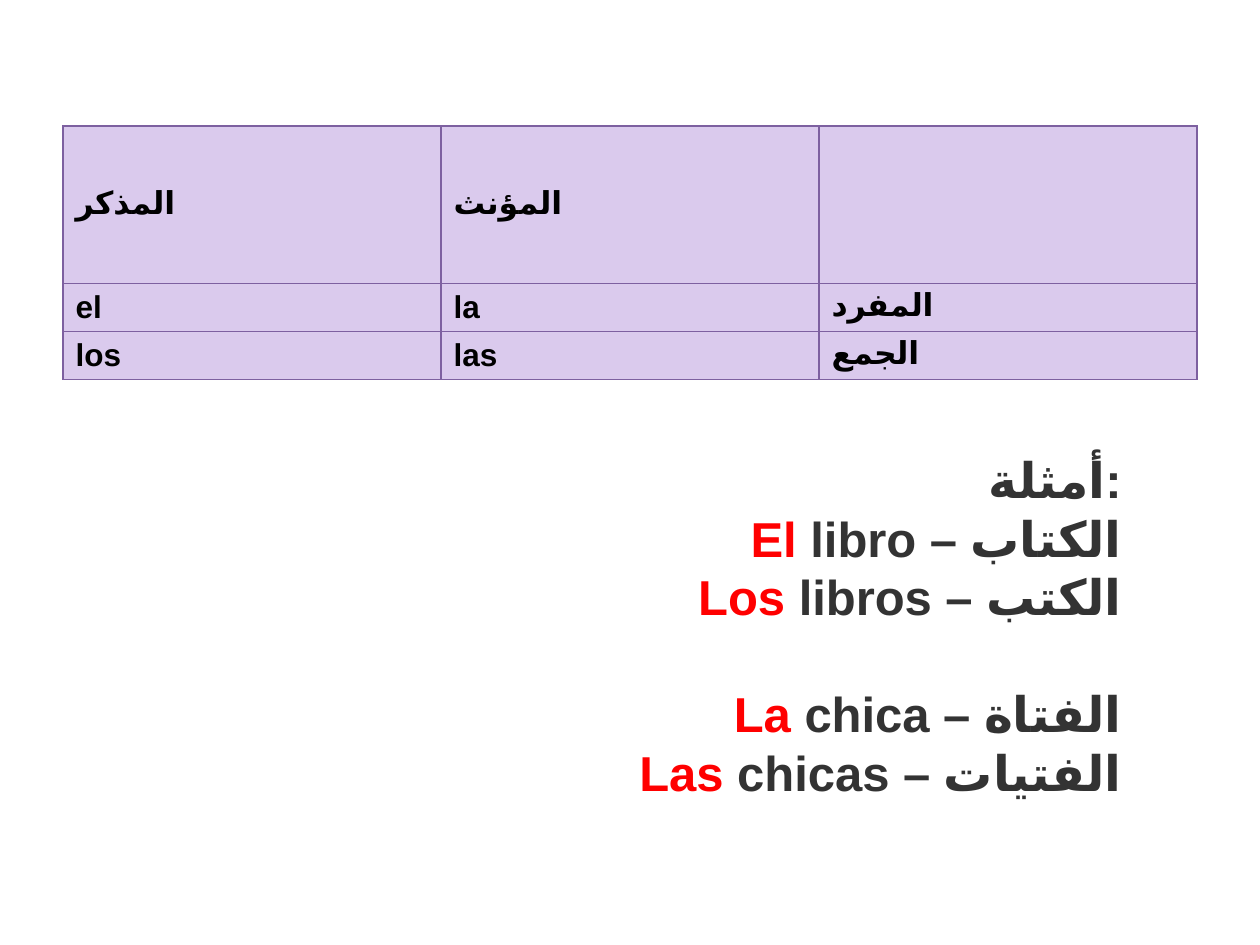
import dataclasses

import lxml.etree
import pptx
import pptx.dml.color
import pptx.enum.lang
import pptx.enum.text
import pptx.oxml.ns
import pptx.util

Pt = pptx.util.Pt


@dataclasses.dataclass(frozen=True)
class Theme:
    """Hold the colours, font and sizes of the slide."""
    font: str = "Arial"
    fill: str = "DACAED"
    border: str = "7D60A0"
    cell_text: str = "000000"
    text: str = "333333"
    article: str = "FF0000"
    cell_size: float = 18
    example_size: float = 28
    border_width: float = 0.75


THEME = Theme()

ARTICLES = [
    ["المذكر", "المؤنث", ""],
    ["el", "la", "المفرد"],
    ["los", "las", "الجمع"],
]

EXAMPLES = [
    ("", "أمثلة:", 0),
    ("El", "libro – الكتاب", 0),
    ("Los", "libros – الكتب", 0),
    ("La", "chica – الفتاة", 33),
    ("Las", "chicas – الفتيات", 0),
]


def add_child(parent, tag, **attributes):
    """Append a DrawingML element to the parent."""
    return lxml.etree.SubElement(parent, pptx.oxml.ns.qn(tag), attributes)


def add_text(para, text, *, size, color, bold=True):
    """Add a formatted span of text to a paragraph."""
    span = para.add_run()
    span.text = text
    span.font.size = Pt(size)
    span.font.bold = bold
    span.font.color.rgb = pptx.dml.color.RGBColor.from_string(color)
    span.font.name = THEME.font
    span.font.language_id = pptx.enum.lang.MSO_LANGUAGE_ID.ARABIC


def set_borders(cell):
    """Draw a thin line on all four sides of a cell."""
    properties = cell._tc.get_or_add_tcPr()
    for side in ("a:lnL", "a:lnR", "a:lnT", "a:lnB"):
        line = add_child(properties, side, w=str(Pt(THEME.border_width)))
        add_child(add_child(line, "a:solidFill"), "a:srgbClr", val=THEME.border)


def add_article_table(page):
    """Add the table of articles by gender and number."""
    frame = page.shapes.add_table(3, 3, Pt(36), Pt(72), Pt(648), Pt(144.8))
    table = frame.table
    table.first_row = False
    table.horz_banding = False
    for row, height, texts in zip(table.rows, (90, 27.4, 27.4), ARTICLES):
        row.height = Pt(height)
        for cell, text in zip(row.cells, texts):
            set_borders(cell)
            cell.fill.solid()
            cell.fill.fore_color.rgb = pptx.dml.color.RGBColor.from_string(THEME.fill)
            cell.vertical_anchor = pptx.enum.text.MSO_ANCHOR.MIDDLE
            if text:
                add_text(cell.text_frame.paragraphs[0], text,
                         size=THEME.cell_size, color=THEME.cell_text)


def add_examples(page):
    """Add the right-aligned example phrases with coloured articles."""
    box = page.shapes.add_textbox(Pt(180), Pt(211.7), Pt(468), Pt(254.2))
    frame = box.text_frame
    frame.word_wrap = True
    frame.margin_top = Pt(45)
    for index, (article, phrase, gap) in enumerate(EXAMPLES):
        para = frame.add_paragraph() if index else frame.paragraphs[0]
        para.alignment = pptx.enum.text.PP_ALIGN.RIGHT
        para.space_before = Pt(gap)
        if article:
            add_text(para, article + " ", size=THEME.example_size, color=THEME.article)
        add_text(para, phrase, size=THEME.example_size, color=THEME.text)


def main():
    """Build and save the deck."""
    deck = pptx.Presentation()
    deck.slide_width, deck.slide_height = Pt(720), Pt(540)
    page = deck.slides.add_slide(deck.slide_layouts[6])
    add_article_table(page)
    add_examples(page)
    deck.save("out.pptx")


if __name__ == "__main__":
    main()
